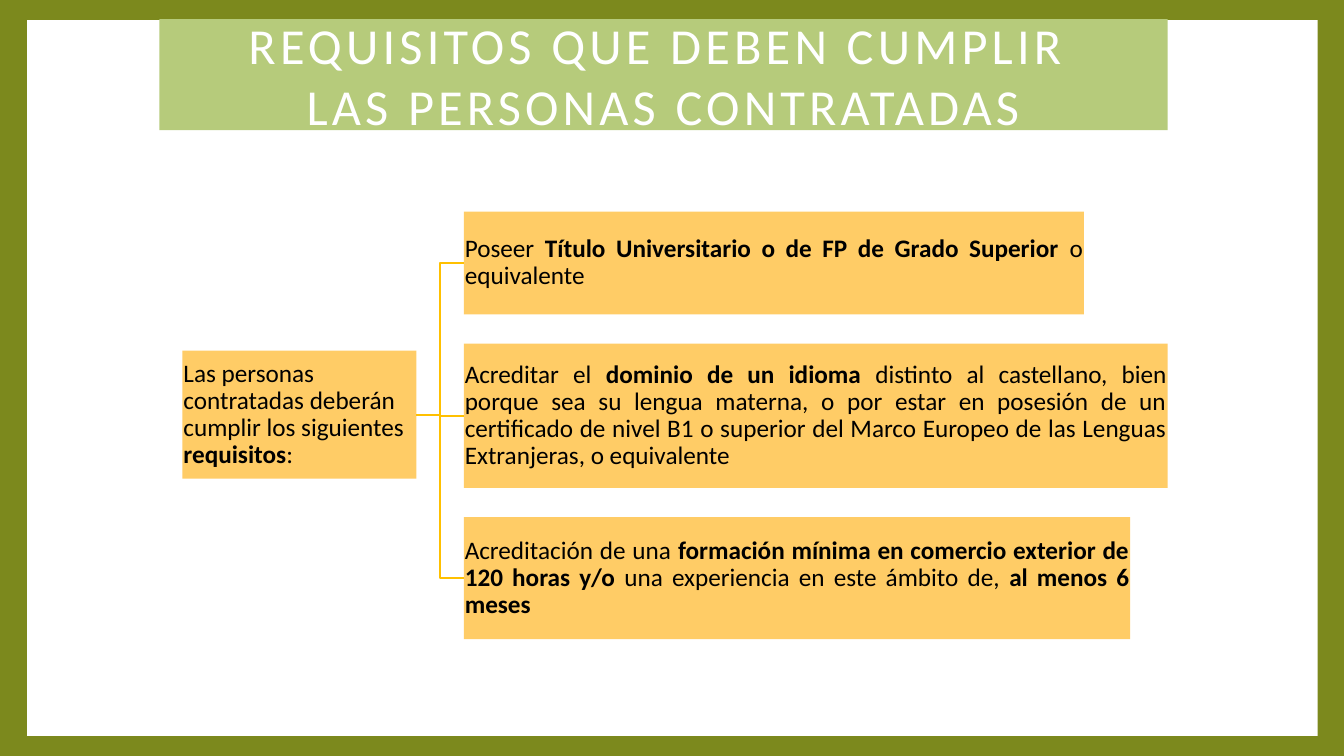
from lxml import etree
from pptx import Presentation
from pptx.dml.color import RGBColor
from pptx.enum import shapes as sh, text as tx
from pptx.oxml.ns import qn
from pptx.util import Inches, Pt

OLIVE = RGBColor(0x7C, 0x89, 0x1D)
GREEN = RGBColor(0xB6, 0xCB, 0x7B)
AMBER = RGBColor(0xFF, 0xCC, 0x66)
GOLD = RGBColor(0xFF, 0xC0, 0x00)
WHITE = RGBColor(0xFF, 0xFF, 0xFF)
BLACK = RGBColor(0, 0, 0)

LEAD = "Las personas contratadas deberán cumplir los siguientes *requisitos*:"
NEEDS = [
    (2.1, 6.15, 1.02, "Poseer *Título Universitario o de FP de Grado Superior *o equivalente"),
    (3.41, 6.98, 1.43, "Acreditar el *dominio de un idioma *distinto al castellano, bien "
     "porque sea su lengua materna, o por estar en posesión de un certificado de nivel B1 "
     "o superior del Marco Europeo de las Lenguas Extranjeras, o equivalente"),
    (5.13, 6.61, 1.21, "Acreditación de una *formación mínima en comercio exterior de 120 "
     "horas y/o* una experiencia en este ámbito de, *al menos 6 meses*"),
]


def write(shape, lines, size=18, color=BLACK, align=tx.PP_ALIGN.LEFT,
          inset=(0.01, 0.01), lead=0.9, space=0):
    frame = shape.text_frame
    frame.word_wrap = True
    frame.auto_size = tx.MSO_AUTO_SIZE.NONE
    frame.vertical_anchor = tx.MSO_ANCHOR.MIDDLE
    frame.margin_left = frame.margin_right = Inches(inset[0])
    frame.margin_top = frame.margin_bottom = Inches(inset[1])
    for row, line in enumerate(lines):
        para = frame.add_paragraph() if row else frame.paragraphs[0]
        para.alignment = align
        para.line_spacing = lead
        for part, words in enumerate(line.split("*")):
            if not words:
                continue
            run = para.add_run()
            run.text = words
            run.font.name = "Calibri"
            run.font.size = Pt(size)
            run.font.bold = part % 2 == 1
            run.font.color.rgb = color
            if space:
                run.font._element.set("spc", str(space * 100))


def panel(slide, left, top, width, height, color):
    box = slide.shapes.add_shape(sh.MSO_SHAPE.RECTANGLE, Inches(left), Inches(top),
                                 Inches(width), Inches(height))
    box.shadow.inherit = False
    box.fill.solid()
    box.fill.fore_color.rgb = color
    box.line.fill.background()
    return box


def link(slide, start, end):
    line = slide.shapes.add_connector(sh.MSO_CONNECTOR.ELBOW, 0, 0, 0, 0)
    line.begin_connect(start, 3)
    line.end_connect(end, 1)
    line.line.color.rgb = GOLD
    line.line.width = Pt(1.5)
    etree.SubElement(line._element.spPr, qn("a:effectLst"))


def head(slide):
    title = slide.shapes.title
    title.left, title.top = Inches(1.58), Inches(0.19)
    title.width, title.height = Inches(10), Inches(1.1)
    title.fill.solid()
    title.fill.fore_color.rgb = GREEN
    write(title, ["REQUISITOS QUE DEBEN CUMPLIR ", "LAS PERSONAS CONTRATADAS"], size=36,
          color=WHITE, align=tx.PP_ALIGN.CENTER, inset=(0.1, 0.05), lead=1.0, space=3)


def main():
    deck = Presentation()
    deck.slide_width, deck.slide_height = Inches(13.33), Inches(7.5)
    slide = deck.slides.add_slide(deck.slide_layouts[5])
    slide.background.fill.solid()
    slide.background.fill.fore_color.rgb = OLIVE
    page = panel(slide, 0.27, 0.2, 12.8, 7.1, WHITE)
    slide.shapes.title._element.addprevious(page._element)
    head(slide)
    root = panel(slide, 1.81, 3.48, 2.32, 1.27, AMBER)
    write(root, [LEAD])
    for top, width, height, words in NEEDS:
        need = panel(slide, 4.6, top, width, height, AMBER)
        write(need, [words], align=tx.PP_ALIGN.JUSTIFY)
        link(slide, root, need)
    deck.save("out.pptx")


if __name__ == "__main__":
    main()
